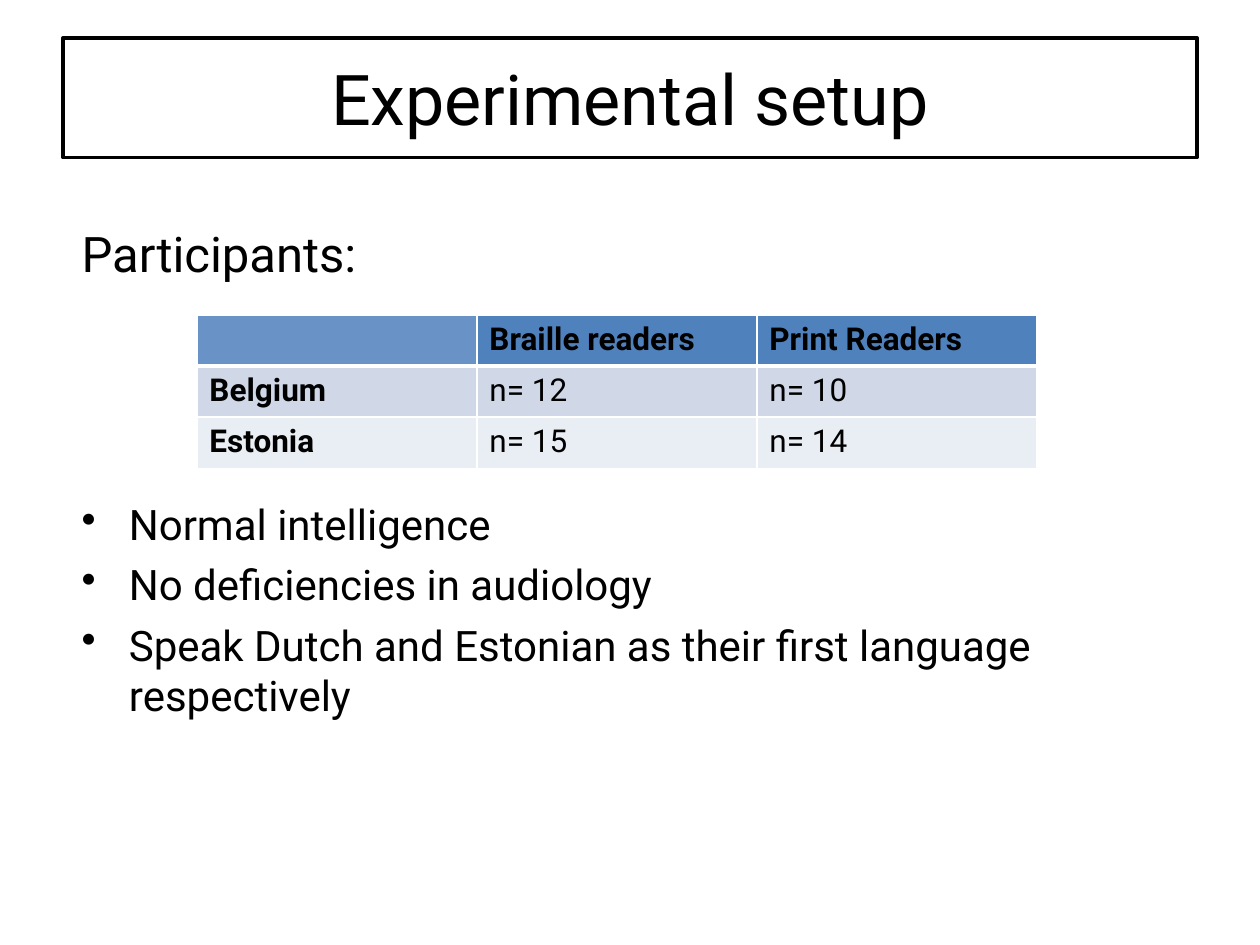
from lxml import etree
from pptx import Presentation
from pptx.dml.color import RGBColor
from pptx.enum.text import MSO_ANCHOR, PP_ALIGN
from pptx.oxml.ns import qn
from pptx.util import Pt

CENTER = PP_ALIGN.CENTER
MIDDLE = MSO_ANCHOR.MIDDLE
FONT = "Roboto"
BLACK, WHITE, BLUE = "000000", "FFFFFF", "4F81BD"
BANDS = ["D0D8E8", "E9EDF4"]


def paint(fill, color):
    fill.solid()
    fill.fore_color.rgb = RGBColor.from_string(color)


def add(parent, tag, **attrs):
    node = etree.SubElement(parent, qn(tag))
    for key, value in attrs.items():
        node.set(key, str(value))
    return node


class Deck:
    def __init__(self):
        self.file = Presentation()
        self.file.slide_width, self.file.slide_height = Pt(720), Pt(540)
        self.slide = self.file.slides.add_slide(self.file.slide_layouts[5])

    def style(self, para, size, bold=False):
        font = para.font
        font.name, font.size, font.bold = FONT, Pt(size), bold
        font.color.rgb = RGBColor.from_string(BLACK)

    def title(self, text, box):
        shape = self.slide.shapes.title
        shape.left, shape.top, shape.width, shape.height = map(Pt, box)
        paint(shape.fill, WHITE)
        paint(shape.line.fill, BLACK)
        shape.line.width = Pt(2)
        frame = shape.text_frame
        frame.text = text
        frame.vertical_anchor = MIDDLE
        para = frame.paragraphs[0]
        para.alignment = CENTER
        self.style(para, 40)

    def body(self, head, points, box, gap):
        """Write a heading, then bullets that start gap points below it."""
        frame = self.slide.shapes.add_textbox(*map(Pt, box)).text_frame
        frame.word_wrap = True
        para = frame.paragraphs[0]
        para.text = head
        self.style(para, 28)
        for i, point in enumerate(points):
            para = frame.add_paragraph()
            para.text = point
            para.space_before = Pt(5.5 if i else gap)
            self.style(para, 24)
            props = para._p.get_or_add_pPr()
            props.set("marL", str(Pt(27)))
            props.set("indent", str(-Pt(27)))
            bullet = etree.Element(qn("a:buChar"), char="•")
            props.insert_element_before(bullet, "a:tabLst", "a:defRPr")

    def edge(self, cell, head):
        """Draw white borders, with a thick one under the head row."""
        props = cell._tc.get_or_add_tcPr()
        for side in "LRTB":
            width = 3 if head and side == "B" else 1
            line = add(props, f"a:ln{side}", w=Pt(width))
            add(add(line, "a:solidFill"), "a:srgbClr", val=WHITE)

    def table(self, rows, left, top, width, height):
        shape = self.slide.shapes.add_table(
            len(rows), len(rows[0]), Pt(left), Pt(top),
            Pt(width * len(rows[0])), Pt(height * len(rows)))
        grid = shape.table
        for r, row in enumerate(rows):
            for c, text in enumerate(row):
                cell = grid.cell(r, c)
                cell.text = text
                self.style(cell.text_frame.paragraphs[0], 18, r == 0 or c == 0)
                self.edge(cell, r == 0)
                paint(cell.fill, BANDS[(r - 1) % 2] if r else BLUE)
        corner = grid.cell(0, 0)._tc.tcPr.find(qn("a:solidFill"))
        add(corner[0], "a:alpha", val=85000)

    def save(self):
        self.file.save("out.pptx")


def main():
    deck = Deck()
    deck.title("Experimental setup", (36, 21.6, 648, 68.4))
    deck.body("Participants:", [
        "Normal intelligence",
        "No deficiencies in audiology",
        "Speak Dutch and Estonian as their first language respectively",
    ], (39.6, 124, 648, 371.5), 124)
    deck.table([
        ["", "Braille readers", "Print Readers"],
        ["Belgium", "n= 12", "n= 10"],
        ["Estonia", "n= 15", "n= 14"],
    ], 112.5, 180, 160, 29.2)
    deck.save()


if __name__ == "__main__":
    main()
